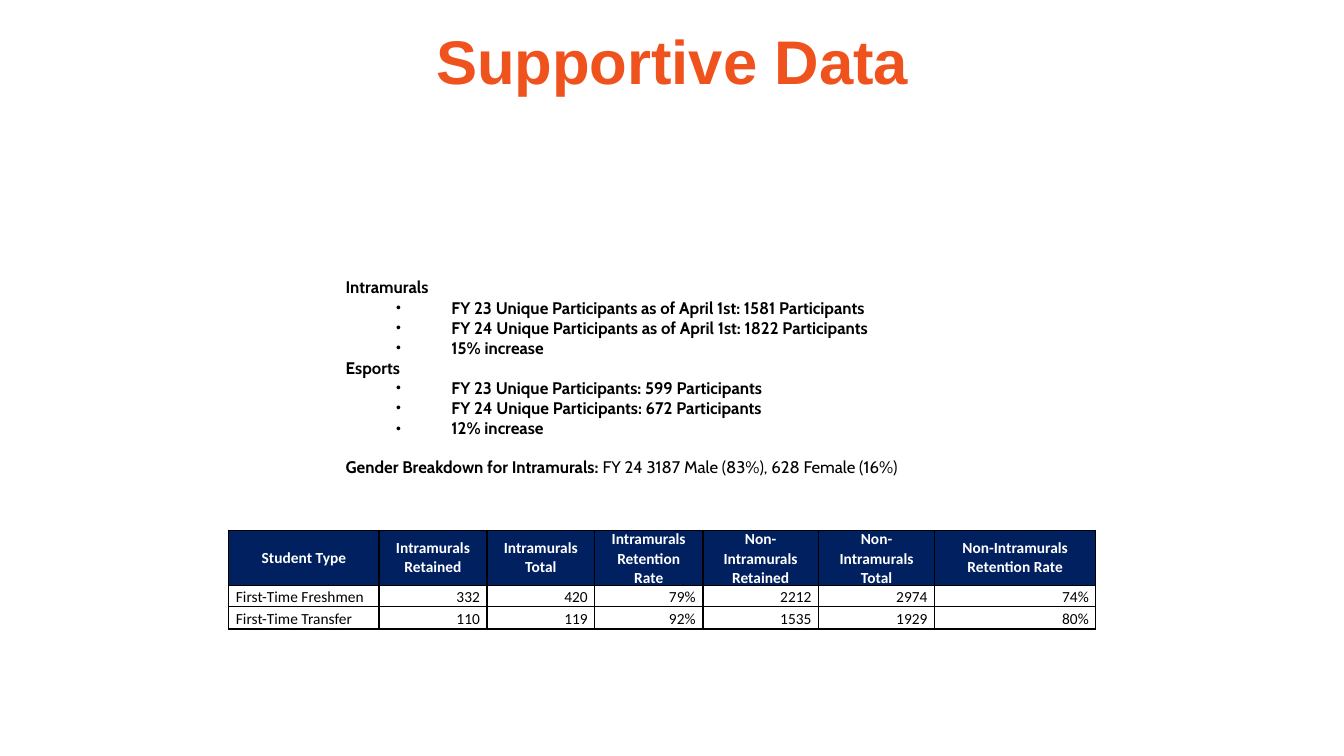
"""Build the Supportive Data slide with participation figures and a retention table."""
from lxml.etree import SubElement
from pptx import Presentation
from pptx.dml.color import RGBColor
from pptx.enum.text import MSO_ANCHOR as Anchor, PP_ALIGN as Align
from pptx.oxml.ns import qn
from pptx.util import Inches, Pt

COLORS = {"title": "F0521E", "text": "000000", "header": "002060", "header_text": "FFFFFF", "border": "000000"}


def add_run(paragraph, text, size, font, color, bold):
    run = paragraph.add_run()
    run.text = text
    run.font.size = Pt(size)
    run.font.name = font
    run.font.bold = bold
    run.font.color.rgb = RGBColor.from_string(COLORS[color])


def add_border(cell, side, width):
    line = SubElement(cell._tc.get_or_add_tcPr(), qn(f"a:ln{side}"), w=str(Pt(width)))
    fill = SubElement(line, qn("a:solidFill"))
    SubElement(fill, qn("a:srgbClr"), val=COLORS["border"])


presentation = Presentation()
presentation.slide_width = Inches(13.33)
presentation.slide_height = Inches(7.5)
slide = presentation.slides.add_slide(presentation.slide_layouts[6])

title = slide.shapes.add_textbox(Inches(0.92), Inches(0.21), Inches(11.5), Inches(1.45)).text_frame
title.word_wrap = True
title.margin_top = Inches(0.1)
title.paragraphs[0].alignment = Align.CENTER
title.paragraphs[0].line_spacing = 0.9
add_run(title.paragraphs[0], "Supportive Data", 44, "Arial", "title", True)

participation = {
    "Intramurals": [
        "FY 23 Unique Participants as of April 1st: 1581 Participants",
        "FY 24 Unique Participants as of April 1st: 1822 Participants",
        "15% increase",
    ],
    "Esports": [
        "FY 23 Unique Participants: 599 Participants",
        "FY 24 Unique Participants: 672 Participants",
        "12% increase",
    ],
}
body = slide.shapes.add_textbox(Inches(3.33), Inches(2.7), Inches(6.67), Inches(2.1)).text_frame
body.word_wrap = True
paragraph = body.paragraphs[0]
for program, facts in participation.items():
    add_run(paragraph, program, 12, "Cabin", "text", True)
    for fact in facts:
        paragraph = body.add_paragraph()
        properties = paragraph._p.get_or_add_pPr()
        properties.set("marL", str(Inches(1.05)))
        properties.set("indent", str(Inches(-0.55)))
        SubElement(properties, qn("a:buSzPct"), val="83000")
        SubElement(properties, qn("a:buFont"), typeface="Arial")
        SubElement(properties, qn("a:buChar"), char="•")
        add_run(paragraph, fact, 12, "Cabin", "text", True)
    paragraph = body.add_paragraph()
paragraph.space_before = Pt(13)
add_run(paragraph, "Gender Breakdown for Intramurals: ", 12, "Cabin", "text", True)
add_run(paragraph, "FY 24 3187 Male (83%), 628 Female (16%)", 12, "Cabin", "text", False)

rows = [
    ["Student Type", "Intramurals Retained", "Intramurals Total", "Intramurals Retention Rate",
     "Non-Intramurals Retained", "Non-Intramurals Total", "Non-Intramurals Retention Rate"],
    ["First-Time Freshmen", "332", "420", "79%", "2212", "2974", "74%"],
    ["First-Time Transfer", "110", "119", "92%", "1535", "1929", "80%"],
]
column_widths = [1.49, 1.07, 1.07, 1.07, 1.15, 1.15, 1.6]
row_heights = [0.55, 0.21, 0.22]
table = slide.shapes.add_table(
    len(rows), len(column_widths), Inches(2.27), Inches(5.26), Inches(8.6), Inches(0.98)).table
table.horz_banding = False
for column, width in zip(table.columns, column_widths):
    column.width = Inches(width)
for row, height in zip(table.rows, row_heights):
    row.height = Inches(height)

for row_index, values in enumerate(rows):
    is_header = row_index == 0
    for column_index, value in enumerate(values):
        cell = table.cell(row_index, column_index)
        cell.margin_left = cell.margin_right = Inches(0.07)
        cell.margin_top = cell.margin_bottom = 0
        cell.vertical_anchor = Anchor.MIDDLE if is_header else Anchor.BOTTOM
        add_border(cell, "L", 1.5 if column_index == 4 else 1)
        add_border(cell, "R", 1.5 if column_index == 3 else 1)
        add_border(cell, "T", 1)
        add_border(cell, "B", 1)
        paragraph = cell.text_frame.paragraphs[0]
        if is_header:
            cell.fill.solid()
            cell.fill.fore_color.rgb = RGBColor.from_string(COLORS["header"])
            paragraph.alignment = Align.CENTER
        else:
            cell.fill.background()
            paragraph.alignment = Align.RIGHT if column_index else Align.LEFT
        add_run(paragraph, value, 11, "Calibri", "header_text" if is_header else "text", is_header)

presentation.save("out.pptx")
